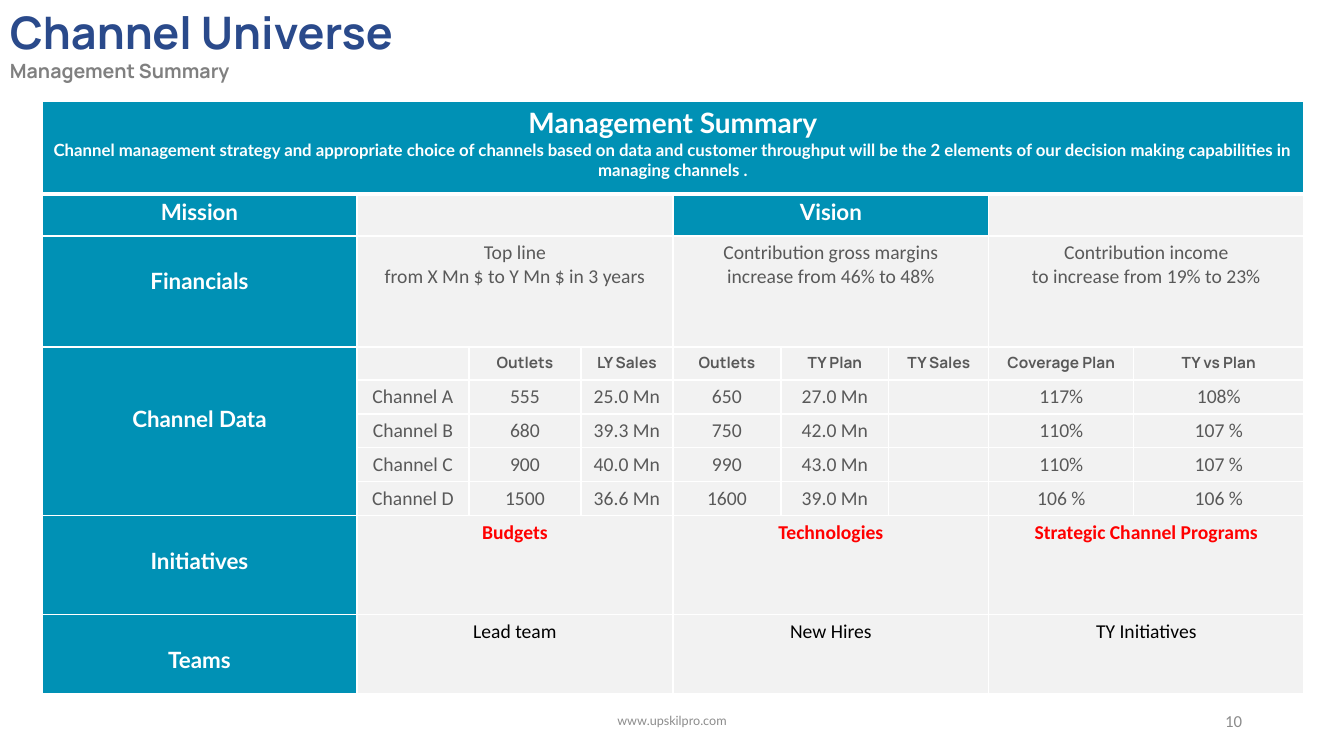
from lxml.etree import SubElement
from pptx import Presentation
from pptx.dml.color import RGBColor
from pptx.enum.text import MSO_ANCHOR, PP_ALIGN
from pptx.oxml import parse_xml
from pptx.oxml.ns import nsdecls, qn
from pptx.util import Pt

PX = 914400 / 100.8
COLORS = {
    "teal": "0091B5", "panel": "F2F2F2", "white": "FFFFFF", "body": "595959",
    "red": "FF0000", "black": "000000", "title": "2A4A8B", "subtitle": "808080",
    "footer": "8C8C8C",
}
COLS = [315, 112, 112, 92, 108, 108, 100, 145, 170]
ROWS = [93, 42, 111, 33, 34, 34, 34, 34, 99, 79]
GROUPS = [(1, 3), (4, 6), (7, 8)]
LABEL_LINE = 27
INSET = 5

BANNER = ("Lato", 20, "white", True)
MESSAGE = ("Lato", 12, "white", True)
LABEL = ("Lato", 16, "white", True)
HEADING = ("Manrope", 11, "body", True)
BODY = ("Calibri", 14, "body", False)
INITIATIVE = ("Calibri", 14, "red", True)
TEAM = ("Calibri", 14, "black", False)

LABELS = [(1, 1, "Mission", 0), (2, 2, "Financials", 1), (3, 7, "Channel Data", 2),
          (8, 8, "Initiatives", 1), (9, 9, "Teams", 1)]
GROUP_ROWS = {
    2: (BODY, [["Top line", "from X Mn $ to Y Mn $ in 3 years"],
               ["Contribution gross margins", "increase from 46% to 48%"],
               ["Contribution income", "to increase from 19% to 23%"]]),
    8: (INITIATIVE, [["Budgets"], ["Technologies"], ["Strategic Channel Programs"]]),
    9: (TEAM, [["Lead team"], ["New Hires"], ["TY Initiatives"]]),
}
CHANNELS = [
    ["", "Outlets", "LY Sales", "Outlets", "TY Plan", "TY Sales", "Coverage Plan", "TY vs Plan"],
    ["Channel A", "555", "25.0 Mn", "650", "27.0 Mn", "", "117%", "108%"],
    ["Channel B", "680", "39.3 Mn", "750", "42.0 Mn", "", "110%", "107 %"],
    ["Channel C", "900", "40.0 Mn", "990", "43.0 Mn", "", "110%", "107 %"],
    ["Channel D", "1500", "36.6 Mn", "1600", "39.0 Mn", "", "106 %", "106 %"],
]


def px(n):
    return round(n * PX)


def rgb(name):
    return RGBColor.from_string(COLORS[name])


def write(tf, lines, align):
    for i, (text, (font, size, color, bold)) in enumerate(lines):
        p = tf.paragraphs[0] if i == 0 else tf.add_paragraph()
        p.alignment = align
        r = p.add_run()
        r.text = text
        r.font.name = font
        r.font.size = Pt(size)
        r.font.bold = bold
        r.font.color.rgb = rgb(color)


def add_text(slide, box, lines, align=PP_ALIGN.LEFT, anchor=MSO_ANCHOR.TOP):
    tf = slide.shapes.add_textbox(*map(px, box)).text_frame
    tf.word_wrap = True
    tf.vertical_anchor = anchor
    write(tf, lines, align)


def style_cell(cell, fill, bottom):
    cell.fill.solid()
    cell.fill.fore_color.rgb = rgb(fill)
    cell.margin_top = cell.margin_bottom = px(INSET)
    pr = cell._tc.get_or_add_tcPr()
    for i, side in enumerate("LRTB"):
        width = Pt(bottom if side == "B" else 1)
        pr.insert(i, parse_xml(
            f'<a:ln{side} {nsdecls("a")} w="{width}"><a:solidFill>'
            f'<a:srgbClr val="{COLORS["white"]}"/></a:solidFill></a:ln{side}>'))


def fill_cell(cell, texts, style):
    write(cell.text_frame, [(t, style) for t in texts], PP_ALIGN.CENTER)


def add_summary_table(slide, box):
    frame = slide.shapes.add_table(len(ROWS), len(COLS), *map(px, box))
    table = frame.table
    table.first_row = table.horz_banding = False
    for col, width in zip(table.columns, COLS):
        col.width = px(width)
    for row, height in zip(table.rows, ROWS):
        row.height = px(height)

    for r in range(len(ROWS)):
        for c in range(len(COLS)):
            teal = r == 0 or c == 0 or (r == 1 and 4 <= c <= 6)
            style_cell(table.cell(r, c), "teal" if teal else "panel", 3 if r == 0 else 1)

    table.cell(0, 0).merge(table.cell(0, len(COLS) - 1))
    write(table.cell(0, 0).text_frame, [
        ("Management Summary", BANNER),
        ("Channel management strategy and appropriate choice of channels based on data "
         "and customer throughput will be the 2 elements of our decision making "
         "capabilities in managing channels .", MESSAGE),
    ], PP_ALIGN.CENTER)

    for first, last, text, offset in LABELS:
        cell = table.cell(first, 0)
        if last > first:
            cell.merge(table.cell(last, 0))
        cell.margin_top = px(INSET + offset * LABEL_LINE)
        fill_cell(cell, [text], LABEL)

    for r in (1, *GROUP_ROWS):
        for first, last in GROUPS:
            table.cell(r, first).merge(table.cell(r, last))
    fill_cell(table.cell(1, 4), ["Vision"], LABEL)
    for r, (style, groups) in GROUP_ROWS.items():
        for (first, last), texts in zip(GROUPS, groups):
            fill_cell(table.cell(r, first), texts, style)

    for r, values in enumerate(CHANNELS, 3):
        for c, value in enumerate(values, 1):
            if value:
                fill_cell(table.cell(r, c), [value], HEADING if r == 3 else BODY)

    for cell in table.iter_cells():
        if not cell.text:
            SubElement(cell.text_frame.paragraphs[0]._p, qn("a:endParaRPr"), sz="1100")


def add_header(slide, box):
    add_text(slide, box, [("Channel Universe", ("Manrope", 32, "title", True)),
                          ("Management Summary", ("Manrope", 14, "subtitle", True))])


def add_footer(slide, box):
    x, y, w, h = box
    add_text(slide, (x, y, 454, h), [("www.upskilpro.com", ("Lato", 9, "footer", False))],
             PP_ALIGN.CENTER, MSO_ANCHOR.MIDDLE)
    add_text(slide, (x + w - 302, y, 302, h), [("10", ("Calibri", 12, "footer", False))],
             PP_ALIGN.RIGHT, MSO_ANCHOR.MIDDLE)


def main():
    prs = Presentation()
    prs.slide_width, prs.slide_height = px(1344), px(756)
    slide = prs.slides.add_slide(prs.slide_layouts[6])
    add_summary_table(slide, (42, 101, sum(COLS), sum(ROWS)))
    add_header(slide, (0, 0, 777, 89))
    add_footer(slide, (445, 701, 807, 40))
    prs.save("out.pptx")


if __name__ == "__main__":
    main()
